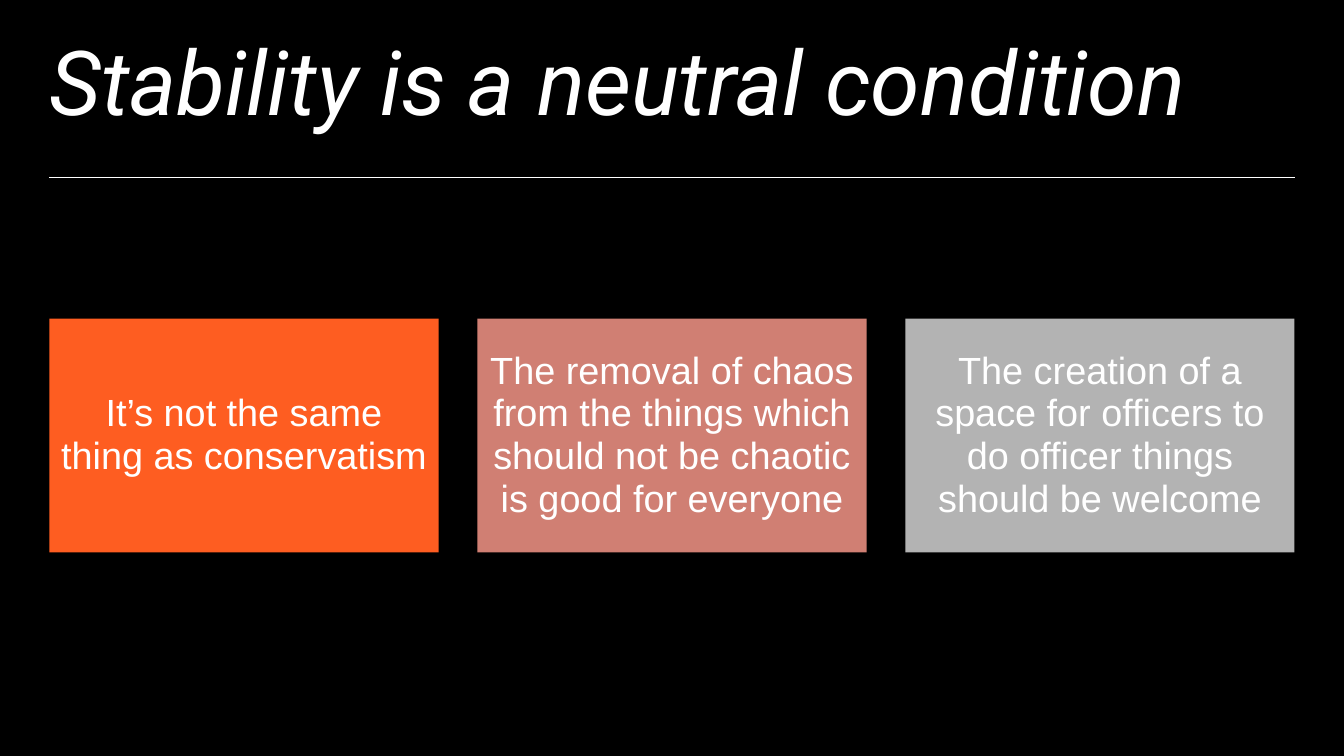
import dataclasses

import pptx
import pptx.dml.color
import pptx.enum.shapes
import pptx.enum.text
import pptx.oxml.ns
import pptx.util
from lxml import etree

Inches = pptx.util.Inches
COLOURS = {
    "black": "000000",
    "white": "FFFFFF",
    "orange": "FE5D21",
    "rose": "D07F73",
    "grey": "B3B3B3",
}
MARGIN = 0.49
CONTENT_WIDTH = 12.35
CARD_TOP, CARD_WIDTH, CARD_HEIGHT = 3.16, 3.86, 2.32
RULE_TOP = 1.76


@dataclasses.dataclass(frozen=True)
class Card:
    text: str
    colour: str


CARDS = [
    Card("It’s not the same thing as conservatism", "orange"),
    Card("The removal of chaos from the things which should not be chaotic is good for everyone", "rose"),
    Card("The creation of a space for officers to do officer things should be welcome", "grey"),
]


def colour_of(name: str) -> pptx.dml.color.RGBColor:
    return pptx.dml.color.RGBColor.from_string(COLOURS[name])


def write_text(box, text: str, *, font: str, size: float, align: str,
               italic: bool = False, inset: float = 0, spacing: float = 1.0) -> None:
    frame = box.text_frame
    frame.word_wrap = True
    frame.auto_size = pptx.enum.text.MSO_AUTO_SIZE.NONE
    frame.vertical_anchor = pptx.enum.text.MSO_ANCHOR.MIDDLE
    frame.margin_left = frame.margin_right = Inches(inset)
    frame.margin_top = frame.margin_bottom = Inches(inset)
    para = frame.paragraphs[0]
    para.alignment = pptx.enum.text.PP_ALIGN[align]
    para.line_spacing = spacing
    span = para.add_run()
    span.text = text
    span.font.name = font
    span.font.size = pptx.util.Pt(size)
    span.font.italic = italic
    span.font.color.rgb = colour_of("white")


def add_title(page, text: str) -> None:
    title = page.shapes.title
    title.left, title.top = Inches(MARGIN), Inches(0.25)
    title.width, title.height = Inches(12.36), Inches(1.08)
    write_text(title, text, font="Roboto", size=64, align="LEFT", italic=True)


def add_rule(page) -> None:
    rule = page.shapes.add_connector(
        pptx.enum.shapes.MSO_CONNECTOR.STRAIGHT,
        Inches(MARGIN), Inches(RULE_TOP),
        Inches(MARGIN + CONTENT_WIDTH), Inches(RULE_TOP),
    )
    rule.line.color.rgb = colour_of("white")
    rule.line.width = pptx.util.Pt(0.5)
    etree.SubElement(rule._element.spPr, pptx.oxml.ns.qn("a:effectLst"))


def add_card(page, card: Card, left: float) -> None:
    box = page.shapes.add_shape(
        pptx.enum.shapes.MSO_SHAPE.RECTANGLE,
        Inches(left), Inches(CARD_TOP), Inches(CARD_WIDTH), Inches(CARD_HEIGHT),
    )
    box.shadow.inherit = False
    box.fill.solid()
    box.fill.fore_color.rgb = colour_of(card.colour)
    box.line.fill.background()
    write_text(box, card.text, font="Arial", size=27, align="CENTER", inset=0.11, spacing=0.94)


def main() -> None:
    deck = pptx.Presentation()
    deck.slide_width, deck.slide_height = Inches(13.33), Inches(7.5)
    page = deck.slides.add_slide(deck.slide_layouts.get_by_name("Title Only"))
    page.background.fill.solid()
    page.background.fill.fore_color.rgb = colour_of("black")

    add_title(page, "Stability is a neutral condition")
    add_rule(page)
    pitch = (CONTENT_WIDTH - CARD_WIDTH) / (len(CARDS) - 1)
    for column, card in enumerate(CARDS):
        add_card(page, card, MARGIN + column * pitch)
    deck.save("out.pptx")


if __name__ == "__main__":
    main()
